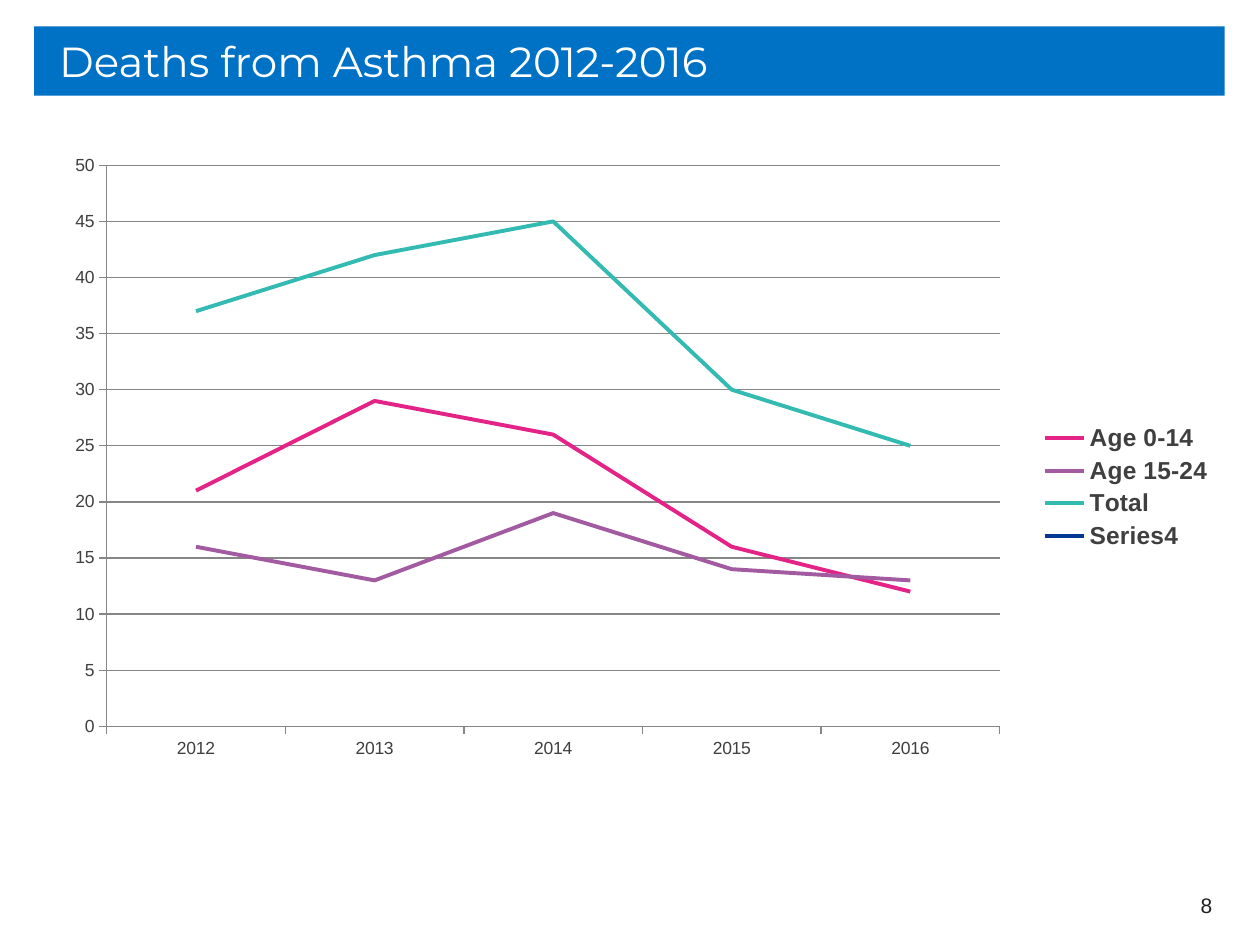
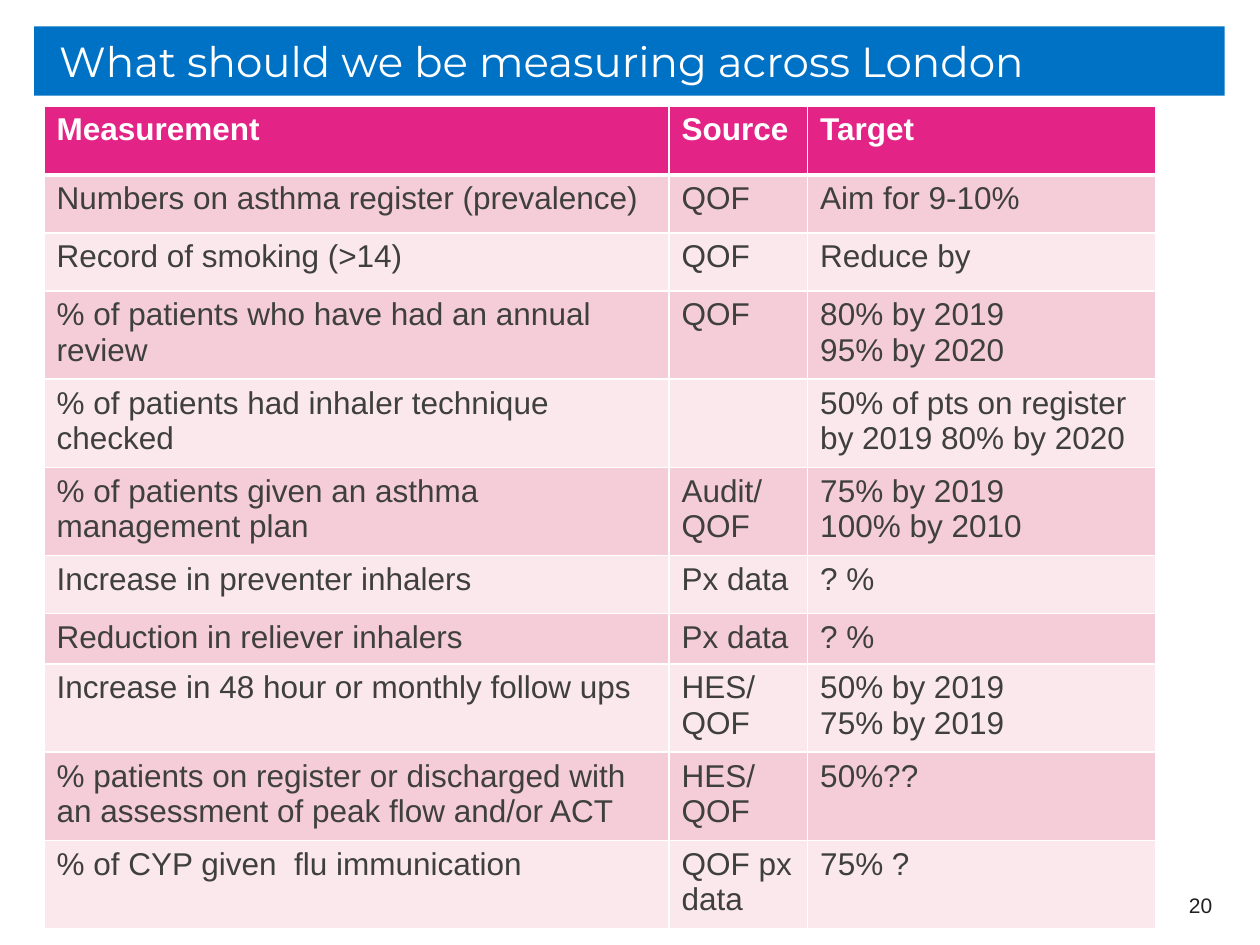
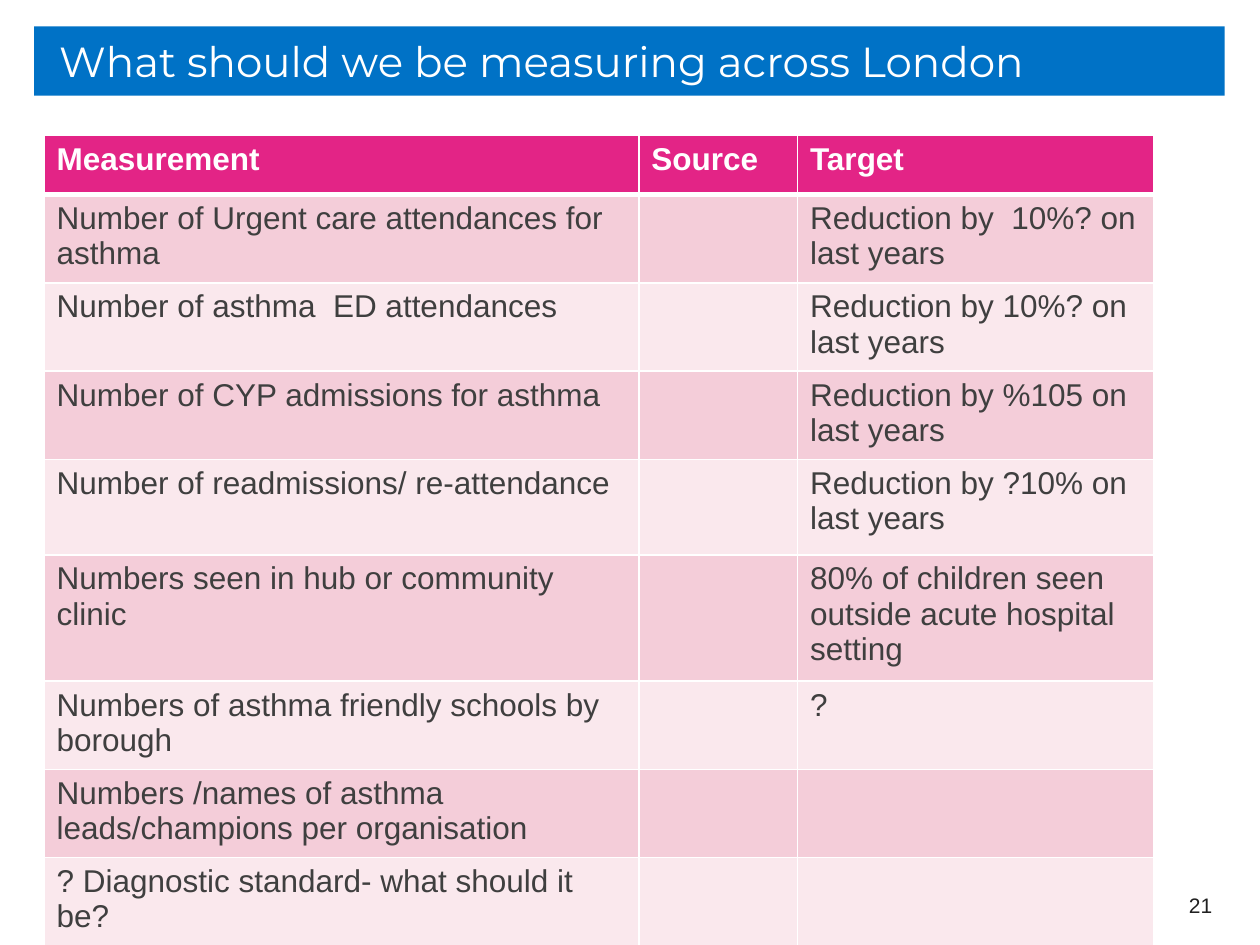
"""Build three slides on asthma deaths and London asthma measurements."""
import lxml.etree
import pptx
import pptx.chart.data
import pptx.dml.color
import pptx.enum.chart
import pptx.enum.text
import pptx.oxml
import pptx.oxml.ns
import pptx.util

RGBColor = pptx.dml.color.RGBColor
BLUE = RGBColor(0x00, 0x72, 0xC6)
NAVY = RGBColor(0x00, 0x38, 0x93)
PINK = RGBColor(0xE3, 0x24, 0x86)
PURPLE = RGBColor(0xA2, 0x5B, 0xA0)
TEAL = RGBColor(0x33, 0xBB, 0xB1)
ROSE = RGBColor(0xF4, 0xCD, 0xD9)
BLUSH = RGBColor(0xFA, 0xE8, 0xED)
CHARCOAL = RGBColor(0x3F, 0x3F, 0x3F)
INK = RGBColor(0x20, 0x20, 0x20)
GREY = RGBColor(0x86, 0x86, 0x86)
WHITE = RGBColor(0xFF, 0xFF, 0xFF)

YEARS = ["2012", "2013", "2014", "2015", "2016"]
DEATHS = [
    ("Age 0-14", [21, 29, 26, 16, 12], PINK),
    ("Age 15-24", [16, 13, 19, 14, 13], PURPLE),
    ("Total", [37, 42, 45, 30, 25], TEAL),
    ("Series4", [None] * len(YEARS), NAVY),
]
PLOT_AREA = {"x": 0.06, "y": 0.03, "w": 0.75, "h": 0.82}

MEASURING = "What should we be measuring across London"
HEADINGS = ("Measurement", "Source", "Target")
ROW = 6.13
CARE_MEASURES = [
    (7.33, HEADINGS),
    (ROW, ("Numbers on asthma register (prevalence)", "QOF", "Aim for 9-10%")),
    (ROW, ("Record of smoking (>14)", "QOF", "Reduce by")),
    (ROW, ("% of patients who have had an annual review", "QOF",
           "80% by 2019\n95% by 2020")),
    (ROW, ("% of patients had inhaler technique checked", "",
           "50% of pts on register by 2019 80% by 2020")),
    (ROW, ("% of patients given an asthma management plan", "Audit/\nQOF",
           "75% by 2019\n100% by 2010")),
    (ROW, ("Increase in preventer inhalers", "Px data", "? %")),
    (4.8, ("Reduction in reliever inhalers", "Px data", "? %")),
    (ROW, ("Increase in 48 hour or monthly follow ups", "HES/\nQOF",
           "50% by 2019\n75% by 2019")),
    (ROW, ("% patients on register or discharged with an assessment of "
           "peak flow and/or ACT", "HES/ QOF", "50%??")),
    (ROW, ("% of CYP given  flu immunication", "QOF px data", "75% ?")),
]
SERVICE_MEASURES = [
    (6.27, HEADINGS),
    (ROW, ("Number of Urgent care attendances for asthma", "",
           "Reduction by  10%? on last years")),
    (ROW, ("Number of asthma  ED attendances", "",
           "Reduction by 10%? on last years")),
    (ROW, ("Number of CYP admissions for asthma", "",
           "Reduction by %105 on last years")),
    (10.13, ("Number of readmissions/ re-attendance", "",
             "Reduction by ?10% on last years")),
    (ROW, ("Numbers seen in hub or community clinic", "",
           "80% of children seen outside acute hospital setting")),
    (8.93, ("Numbers of asthma friendly schools by borough", "", "?")),
    (ROW, ("Numbers /names of asthma leads/champions per organisation", "", "")),
    (ROW, ("? Diagnostic standard- what should it be?", "", "")),
]


class Deck:
    """Hold the shared style and current slide; lengths are percentages of the slide."""

    def __init__(self):
        self.show = pptx.Presentation()
        self.show.slide_width = pptx.util.Inches(10)
        self.show.slide_height = pptx.util.Inches(7.5)
        self.slide = None

    def across(self, share):
        """Turn a percentage of the slide's width into a length."""
        return round(self.show.slide_width * share / 100)

    def down(self, share):
        """Turn a percentage of the slide's height into a length."""
        return round(self.show.slide_height * share / 100)

    def box(self, left, top, width, height):
        """Turn four percentages into a position and size."""
        return self.across(left), self.down(top), self.across(width), self.down(height)

    def style(self, font, size, color, face="Arial", bold=False):
        """Format a font."""
        font.name, font.size, font.bold = face, pptx.util.Pt(size), bold
        font.color.rgb = color

    def add_text(self, frame, text, *look, align=pptx.enum.text.PP_ALIGN.LEFT, **more):
        """Add one formatted run per line of text."""
        for index, line in enumerate(text.split("\n")):
            paragraph = frame.add_paragraph() if index else frame.paragraphs[0]
            paragraph.alignment = align
            if line:
                run = paragraph.add_run()
                run.text = line
                self.style(run.font, *look, **more)

    def page(self, heading, number):
        """Start a slide with its title band and page number."""
        self.slide = self.show.slides.add_slide(self.show.slide_layouts[5])
        band = self.slide.shapes.title
        band.left, band.top, band.width, band.height = self.box(2.7, 2.8, 94.5, 7.33)
        band.fill.solid()
        band.fill.fore_color.rgb = BLUE
        frame = band.text_frame
        frame.auto_size = pptx.enum.text.MSO_AUTO_SIZE.NONE
        frame.vertical_anchor = pptx.enum.text.MSO_ANCHOR.MIDDLE
        frame.margin_left = self.across(2)
        self.add_text(frame, heading, 24, WHITE, face="Montserrat")

        corner = self.slide.shapes.add_textbox(*self.box(73.9, 93.07, 23.3, 5.33))
        corner.text_frame.word_wrap = True
        corner.text_frame.vertical_anchor = pptx.enum.text.MSO_ANCHOR.MIDDLE
        self.add_text(corner.text_frame, str(number), 12, INK,
                      align=pptx.enum.text.PP_ALIGN.RIGHT)

    def border(self, cell, **widths):
        """Draw white cell borders, given a width in points for each side."""
        properties = cell._tc.get_or_add_tcPr()
        for side, width in widths.items():
            line = lxml.etree.SubElement(
                properties, pptx.oxml.ns.qn(f"a:ln{side}"), w=str(pptx.util.Pt(width)))
            fill = lxml.etree.SubElement(line, pptx.oxml.ns.qn("a:solidFill"))
            lxml.etree.SubElement(fill, pptx.oxml.ns.qn("a:srgbClr"), val=str(WHITE))

    def table(self, top, columns, measures):
        """Add a table with a pink heading row and alternating rows below."""
        heights = [height for height, _ in measures]
        table = self.slide.shapes.add_table(
            len(measures), len(columns),
            *self.box(3.5, top, sum(columns), sum(heights))).table
        for column, width in zip(table.columns, columns):
            column.width = self.across(width)
        for r, (height, texts) in enumerate(measures):
            table.rows[r].height = self.down(height)
            fill = (ROSE if r % 2 else BLUSH) if r else PINK
            for c, text in enumerate(texts):
                cell = table.cell(r, c)
                self.border(cell, L=1, R=1, T=3 if r == 1 else 1, B=1 if r else 3)
                cell.fill.solid()
                cell.fill.fore_color.rgb = fill
                self.add_text(cell.text_frame, text, 18, CHARCOAL if r else WHITE,
                              bold=r == 0)

    def line_chart(self, place, categories, series):
        """Add a line chart with a legend on the right."""
        data = pptx.chart.data.CategoryChartData()
        data.categories = categories
        for name, values, _ in series:
            data.add_series(name, values)
        chart = self.slide.shapes.add_chart(
            pptx.enum.chart.XL_CHART_TYPE.LINE, *self.box(*place), data).chart
        chart.has_title = False
        self.style(chart.font, 10, CHARCOAL)
        chart.has_legend = True
        chart.legend.position = pptx.enum.chart.XL_LEGEND_POSITION.RIGHT
        chart.legend.include_in_layout = False
        self.style(chart.legend.font, 14, CHARCOAL, bold=True)
        for line, (_, _, color) in zip(chart.plots[0].series, series):
            line.smooth = False
            line.format.line.color.rgb = color
            line.format.line.width = pptx.util.Pt(2.25)

        scale = chart.value_axis
        scale.minimum_scale, scale.maximum_scale, scale.major_unit = 0, 50, 5
        scale.has_major_gridlines = True
        for axis in (chart.category_axis, scale):
            axis.major_tick_mark = pptx.enum.chart.XL_TICK_MARK.OUTSIDE
        for rule in (chart.category_axis, scale, scale.major_gridlines):
            rule.format.line.color.rgb = GREY
            rule.format.line.width = pptx.util.Pt(0.75)
        self.place_plot(chart)

    def place_plot(self, chart):
        """Fix the inner plot area inside the chart."""
        qn = pptx.oxml.ns.qn
        area = chart._chartSpace.find(".//" + qn("c:plotArea"))
        for old in area.findall(qn("c:layout")):
            area.remove(old)
        layout = pptx.oxml.parse_xml(f"<c:layout {pptx.oxml.ns.nsdecls('c')}/>")
        area.insert(0, layout)
        manual = lxml.etree.SubElement(layout, qn("c:manualLayout"))
        settings = {"layoutTarget": "inner", "xMode": "edge", "yMode": "edge", **PLOT_AREA}
        for tag, value in settings.items():
            lxml.etree.SubElement(manual, qn(f"c:{tag}"), val=str(value))


def main():
    """Build and save the slides."""
    deck = Deck()
    deck.page("Deaths from Asthma 2012-2016", 8)
    deck.line_chart((2.8, 15.33, 94.5, 72.4), YEARS, DEATHS)
    deck.page(MEASURING, 20)
    deck.table(11.2, (49.6, 11, 27.6), CARE_MEASURES)
    deck.page(MEASURING, 21)
    deck.table(14.33, (47.2, 12.6, 28.3), SERVICE_MEASURES)
    deck.show.save("out.pptx")


if __name__ == "__main__":
    main()
